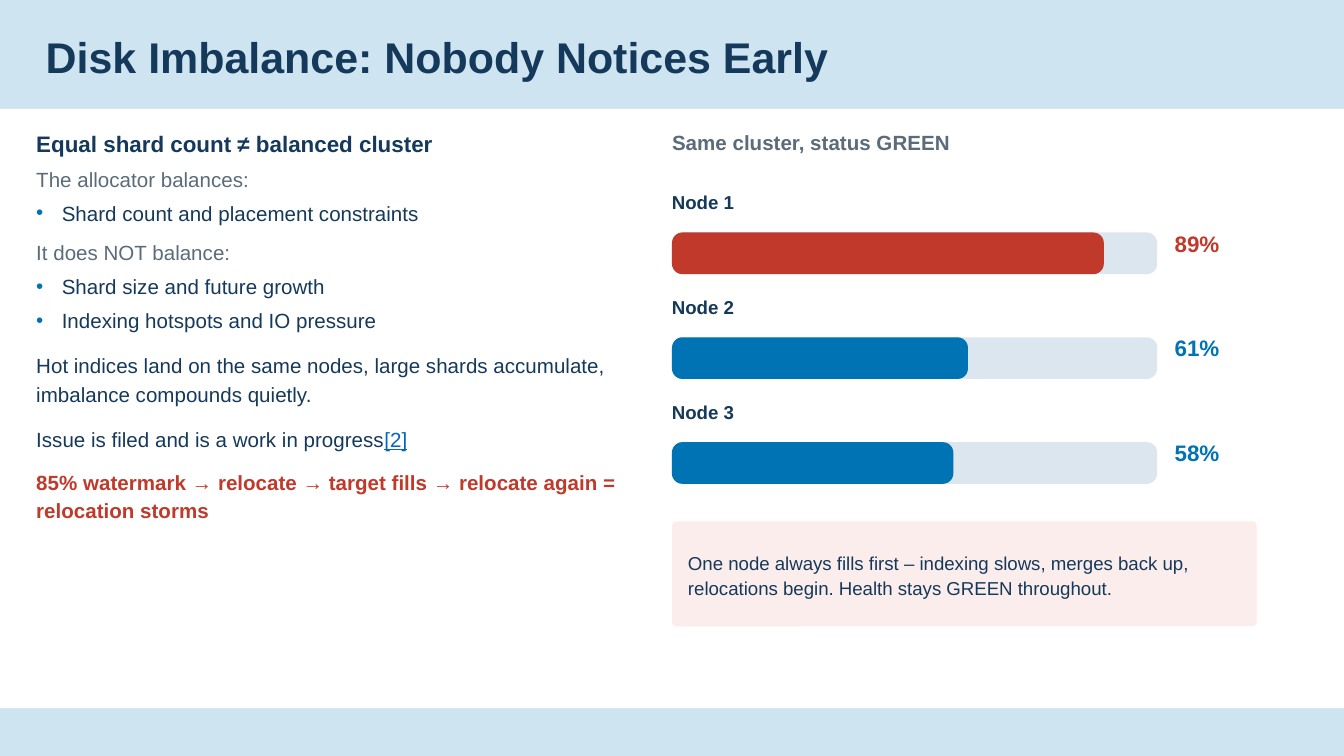
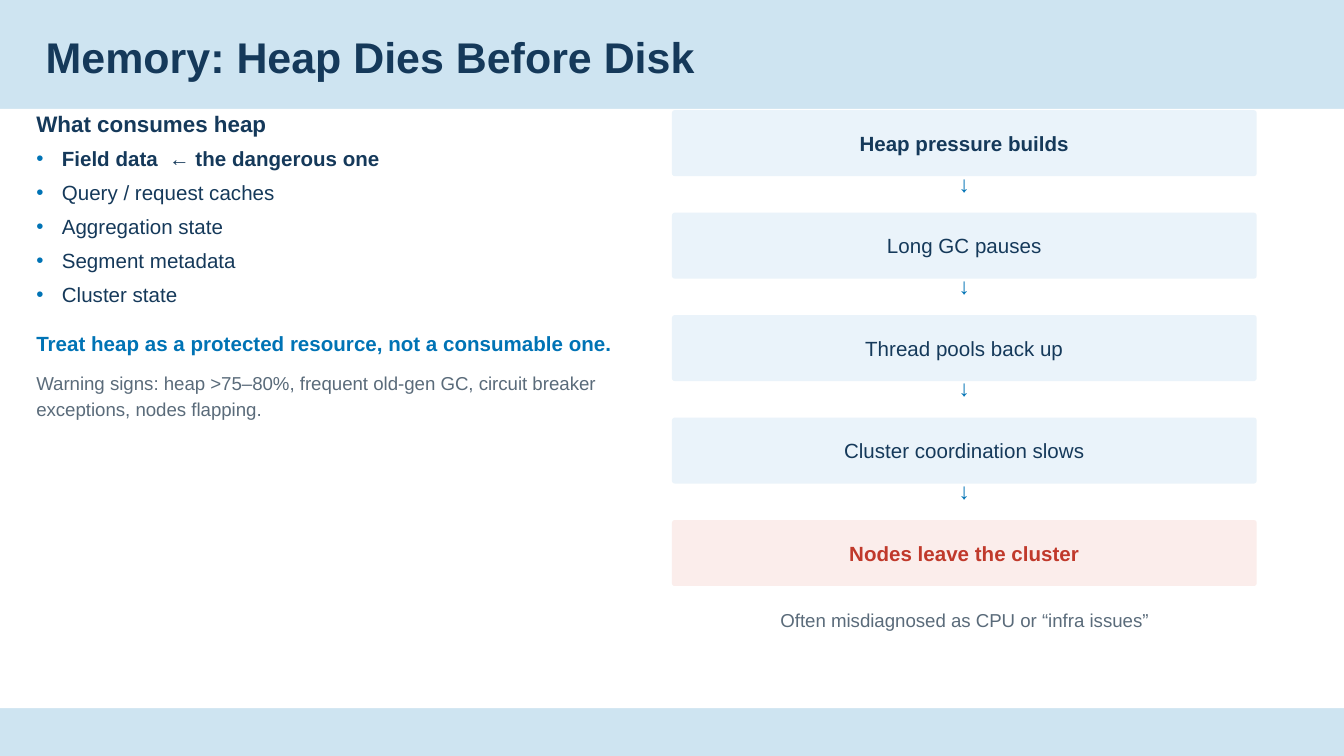
from lxml.etree import SubElement
from pptx import Presentation
from pptx.dml.color import RGBColor
from pptx.enum.shapes import MSO_SHAPE
from pptx.enum.text import MSO_ANCHOR, PP_ALIGN
from pptx.oxml.ns import qn
from pptx.util import Inches, Pt

NAVY = RGBColor(0x15, 0x39, 0x5A)
BLUE = RGBColor(0x00, 0x73, 0xB5)
RED = RGBColor(0xC0, 0x39, 0x2B)
GREY = RGBColor(0x5A, 0x6B, 0x7A)
LINK = RGBColor(0x05, 0x63, 0xC1)
WHITE = RGBColor(0xFF, 0xFF, 0xFF)
BAND = RGBColor(0xCE, 0xE4, 0xF1)
TRACK = RGBColor(0xDC, 0xE6, 0xEE)
PALE_BLUE = RGBColor(0xEA, 0xF3, 0xFA)
PALE_RED = RGBColor(0xFB, 0xED, 0xEB)

FONT = "Arial"
SLIDE_WIDTH = 10
SLIDE_HEIGHT = SLIDE_WIDTH * 9 / 16
LEFT_COLUMN, RIGHT_COLUMN = 0.27, 5
RIGHT_WIDTH = 4.35
BULLET_INDENT = 0.19


def add_bullet(paragraph):
    properties = paragraph._p.get_or_add_pPr()
    properties.set("marL", str(Inches(BULLET_INDENT)))
    properties.set("indent", str(-Inches(BULLET_INDENT)))
    color = SubElement(properties, qn("a:buClr"))
    SubElement(color, qn("a:srgbClr"), val=str(BLUE))
    SubElement(properties, qn("a:buFont"), typeface=FONT)
    SubElement(properties, qn("a:buChar"), char="•")


def write(frame, text, size=11, color=NAVY, bold=False, before=None,
          spacing=None, align=PP_ALIGN.LEFT, bullet=False):
    """Fill the frame's empty first paragraph, or append a new one."""
    paragraph = frame.paragraphs[0]
    if paragraph.text:
        paragraph = frame.add_paragraph()
    paragraph.text = text
    if bullet:
        add_bullet(paragraph)
    if before:
        paragraph.space_before = Pt(before)
    if spacing:
        paragraph.line_spacing = spacing
    paragraph.alignment = align
    font = paragraph.font
    font.name, font.size, font.bold = FONT, Pt(size), bold
    font.color.rgb = color
    return paragraph


def set_margins(frame, horizontal, vertical):
    frame.word_wrap = True
    frame.margin_left = frame.margin_right = Inches(horizontal)
    frame.margin_top = frame.margin_bottom = Inches(vertical)


def add_text_frame(slide, left, top, width, height, margins=(0, 0)):
    box = slide.shapes.add_textbox(
        Inches(left), Inches(top), Inches(width), Inches(height))
    set_margins(box.text_frame, *margins)
    return box.text_frame


def add_block(slide, left, top, width, height, fill, rounding=None):
    """Add a plain rectangle, rounded when a rounding is given."""
    kind = MSO_SHAPE.RECTANGLE if rounding is None else MSO_SHAPE.ROUNDED_RECTANGLE
    shape = slide.shapes.add_shape(
        kind, Inches(left), Inches(top), Inches(width), Inches(height))
    if rounding is not None:
        shape.adjustments[0] = rounding
    shape.shadow.inherit = False
    shape.fill.solid()
    shape.fill.fore_color.rgb = fill
    shape.line.fill.background()
    return shape


def add_card(slide, left, top, width, height, fill, text, **style):
    card = add_block(slide, left, top, width, height, fill, rounding=0.04)
    frame = card.text_frame
    set_margins(frame, 0.11, 0.11)
    frame.vertical_anchor = MSO_ANCHOR.MIDDLE
    write(frame, text, **style)


def add_titled_slide(presentation, title):
    slide = presentation.slides.add_slide(presentation.slide_layouts[6])
    background = slide.background.fill
    background.solid()
    background.fore_color.rgb = BAND
    add_block(slide, 0, 0.81, SLIDE_WIDTH, 4.46, WHITE)
    frame = add_text_frame(slide, LEFT_COLUMN, 0.23, 8.89, 0.33, (0.07, 0.04))
    write(frame, title, size=23, bold=True, spacing=0.9)
    return slide


def add_allocator_notes(slide, left, top, width, height):
    frame = add_text_frame(slide, left, top, width, height)
    write(frame, "Equal shard count ≠ balanced cluster", size=12, bold=True)
    write(frame, "The allocator balances:", color=GREY, before=5)
    write(frame, "Shard count and placement constraints", before=5, bullet=True)
    write(frame, "It does NOT balance:", color=GREY, before=8)
    for item in ("Shard size and future growth", "Indexing hotspots and IO pressure"):
        write(frame, item, before=5, bullet=True)
    write(frame, "Hot indices land on the same nodes, large shards accumulate, "
          "imbalance compounds quietly.", before=9, spacing=1.15)
    issue = write(frame, "Issue is filed and is a work in progress",
                  before=9, spacing=1.15)
    reference = issue.add_run()
    reference.text = "[2]"
    reference.font.color.rgb = LINK
    reference.font.underline = True
    write(frame, "85% watermark → relocate → target fills → relocate again = "
          "relocation storms", color=RED, bold=True, before=8, spacing=1.15)


def add_node_gauge(slide, left, top, name, percent, color):
    track_width, track_height = 3.61, 0.31
    write(add_text_frame(slide, left, top, 0.9, 0.29), name, size=10, bold=True)
    for width, fill in ((track_width, TRACK), (track_width * percent / 100, color)):
        add_block(slide, left, top + 0.31, width, track_height, fill, rounding=0.25)
    frame = add_text_frame(slide, left + 3.74, top + 0.29, 0.74, 0.33)
    write(frame, f"{percent}%", size=12, color=color, bold=True)


def add_disk_usage(slide, left, top, width):
    frame = add_text_frame(slide, left, top, width, 0.33)
    write(frame, "Same cluster, status GREEN", color=GREY, bold=True)
    nodes = (("Node 1", 89, RED), ("Node 2", 61, BLUE), ("Node 3", 58, BLUE))
    for index, (name, percent, color) in enumerate(nodes):
        add_node_gauge(slide, left, top + 0.45 + 0.78 * index, name, percent, color)
    add_card(slide, left, top + 2.91, width, 0.78, PALE_RED,
             "One node always fills first – indexing slows, merges back up, "
             "relocations begin. Health stays GREEN throughout.",
             size=10, spacing=1.15)


def add_heap_notes(slide, left, top, width, height):
    frame = add_text_frame(slide, left, top, width, height)
    write(frame, "What consumes heap", size=12, bold=True)
    write(frame, "Field data  ← the dangerous one", bold=True, before=5, bullet=True)
    for consumer in ("Query / request caches", "Aggregation state",
                     "Segment metadata", "Cluster state"):
        write(frame, consumer, before=5, bullet=True)
    write(frame, "Treat heap as a protected resource, not a consumable one.",
          color=BLUE, bold=True, before=11, spacing=1.15)
    write(frame, "Warning signs: heap >75–80%, frequent old-gen GC, circuit breaker "
          "exceptions, nodes flapping.", size=10, color=GREY, before=7, spacing=1.15)


def add_failure_chain(slide, left, top, width):
    steps = (
        ("Heap pressure builds", PALE_BLUE, NAVY, True),
        ("Long GC pauses", PALE_BLUE, NAVY, False),
        ("Thread pools back up", PALE_BLUE, NAVY, False),
        ("Cluster coordination slows", PALE_BLUE, NAVY, False),
        ("Nodes leave the cluster", PALE_RED, RED, True),
    )
    pitch = 3.05 / (len(steps) - 1)
    for index, (text, fill, color, bold) in enumerate(steps):
        step_top = top + pitch * index
        if index:
            frame = add_text_frame(slide, left, step_top - 0.32, width, 0.33)
            write(frame, "↓", size=12, color=BLUE, bold=True, align=PP_ALIGN.CENTER)
        add_card(slide, left, step_top, width, 0.49, fill, text,
                 color=color, bold=bold, align=PP_ALIGN.CENTER)
    frame = add_text_frame(slide, left, top + 3.71, width, 0.41)
    write(frame, "Often misdiagnosed as CPU or “infra issues”",
          size=10, color=GREY, align=PP_ALIGN.CENTER)


def add_disk_slide(presentation):
    slide = add_titled_slide(presentation, "Disk Imbalance: Nobody Notices Early")
    add_allocator_notes(slide, LEFT_COLUMN, 0.97, 4.43, 4.02)
    add_disk_usage(slide, RIGHT_COLUMN, 0.97, RIGHT_WIDTH)


def add_memory_slide(presentation):
    slide = add_titled_slide(presentation, "Memory: Heap Dies Before Disk")
    add_heap_notes(slide, LEFT_COLUMN, 0.82, 4.35, 4.02)
    add_failure_chain(slide, RIGHT_COLUMN, 0.82, RIGHT_WIDTH)


def main():
    presentation = Presentation()
    presentation.slide_width = Inches(SLIDE_WIDTH)
    presentation.slide_height = Inches(SLIDE_HEIGHT)
    add_disk_slide(presentation)
    add_memory_slide(presentation)
    presentation.save("out.pptx")


if __name__ == "__main__":
    main()
